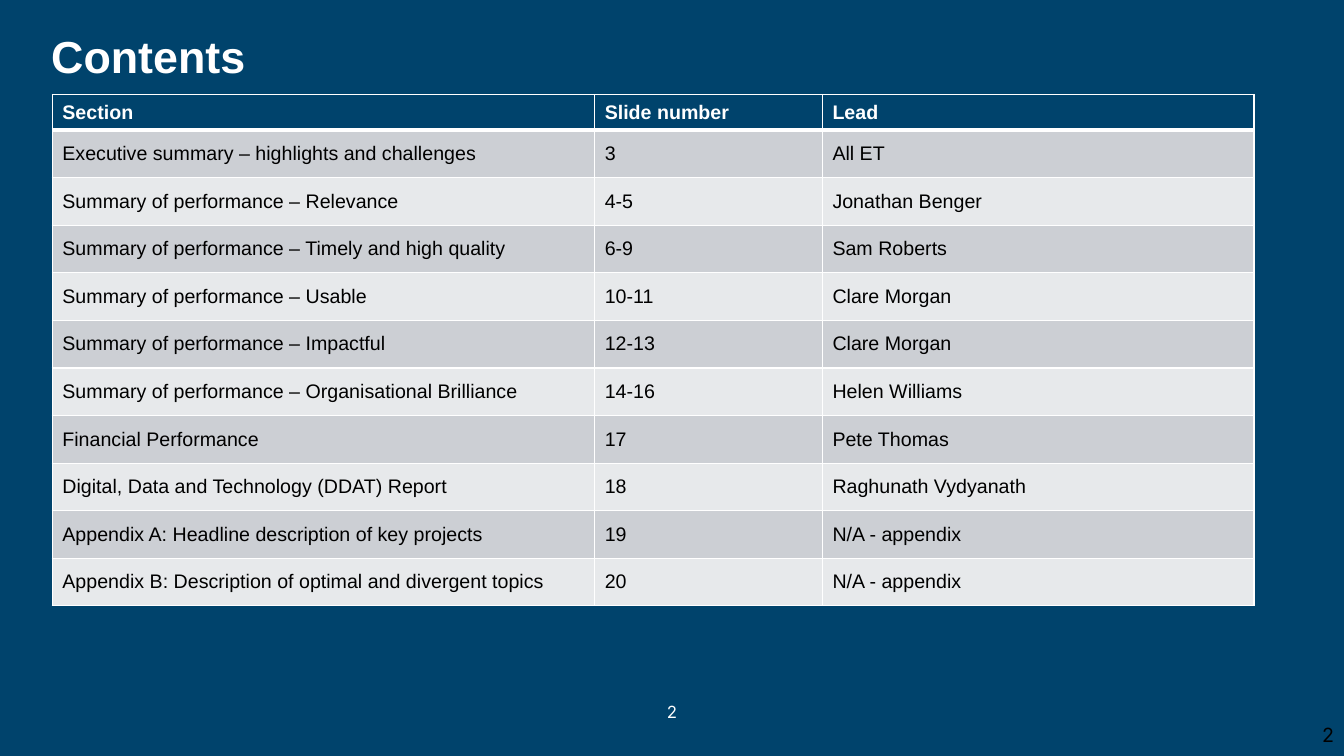
from dataclasses import dataclass

from lxml import etree
from pptx import Presentation
from pptx.dml.color import RGBColor
from pptx.enum import text as t
from pptx.oxml.ns import qn
from pptx.util import Pt


@dataclass(frozen=True)
class Theme:
    navy: str = "00436C"
    white: str = "FFFFFF"
    black: str = "000000"
    bands: tuple = ("CCCFD4", "E7E9EB")
    head: str = "Arial"
    foot: str = "Inter"
    title: int = 32
    body: int = 14
    small: int = 12
    thin: int = 1
    thick: int = 3


THEME = Theme()

WIDTHS = (387.4, 162.7, 308.3)
HEAD_H, ROW_H = 25.2, 34
ROWS = (
    ("Section", "Slide number", "Lead"),
    ("Executive summary – highlights and challenges", "3", "All ET"),
    ("Summary of performance – Relevance", "4-5", "Jonathan Benger"),
    ("Summary of performance – Timely and high quality", "6-9", "Sam Roberts"),
    ("Summary of performance – Usable", "10-11", "Clare Morgan"),
    ("Summary of performance – Impactful", "12-13", "Clare Morgan"),
    ("Summary of performance – Organisational Brilliance", "14-16", "Helen Williams"),
    ("Financial Performance", "17", "Pete Thomas"),
    ("Digital, Data and Technology (DDAT) Report", "18", "Raghunath Vydyanath"),
    ("Appendix A: Headline description of key projects", "19", "N/A - appendix"),
    ("Appendix B: Description of optimal and divergent topics", "20", "N/A - appendix"),
)


def write(frame, text, size=THEME.body, font=THEME.head, color=THEME.white,
          bold=False, align=t.PP_ALIGN.LEFT, space=None):
    """Fill a text frame with one formatted paragraph."""
    frame.word_wrap = True
    para = frame.paragraphs[0]
    para.alignment = align
    para.line_spacing = space
    run = para.add_run()
    run.text = text
    run.font.size = Pt(size)
    run.font.name = font
    run.font.bold = bold
    run.font.color.rgb = RGBColor.from_string(color)


def add_text(slide, box, text, anchor=t.MSO_ANCHOR.TOP, **style):
    frame = slide.shapes.add_textbox(*map(Pt, box)).text_frame
    frame.vertical_anchor = anchor
    write(frame, text, **style)


def add_rules(cell, top, bottom):
    """Draw white borders; top and bottom are widths in points."""
    props = cell._tc.get_or_add_tcPr()
    sides = {"L": THEME.thin, "R": THEME.thin, "T": top, "B": bottom}
    for side, width in sides.items():
        line = etree.SubElement(props, qn(f"a:ln{side}"), w=str(Pt(width)))
        fill = etree.SubElement(line, qn("a:solidFill"))
        etree.SubElement(fill, qn("a:srgbClr"), val=THEME.white)


def add_cell(cell, text, row):
    head = row == 0
    add_rules(cell, top=THEME.thick if row == 1 else THEME.thin,
              bottom=THEME.thick if head else THEME.thin)
    cell.fill.solid()
    color = THEME.navy if head else THEME.bands[(row - 1) % 2]
    cell.fill.fore_color.rgb = RGBColor.from_string(color)
    cell.vertical_anchor = t.MSO_ANCHOR.MIDDLE
    write(cell.text_frame, text, bold=head,
          color=THEME.white if head else THEME.black)


def add_contents(slide, left, top):
    height = HEAD_H + ROW_H * (len(ROWS) - 1)
    table = slide.shapes.add_table(
        len(ROWS), len(WIDTHS), Pt(left), Pt(top),
        Pt(sum(WIDTHS)), Pt(height)).table
    table.horz_banding = False
    for col, width in zip(table.columns, WIDTHS):
        col.width = Pt(width)
    for row, texts in enumerate(ROWS):
        table.rows[row].height = Pt(ROW_H if row else HEAD_H)
        for col, text in enumerate(texts):
            add_cell(table.cell(row, col), text, row)


def main():
    deck = Presentation()
    deck.slide_width, deck.slide_height = Pt(960), Pt(540)
    slide = deck.slides.add_slide(deck.slide_layouts[6])
    back = slide.background.fill
    back.solid()
    back.fore_color.rgb = RGBColor.from_string(THEME.navy)

    add_text(slide, (372, 497.5, 216, 28.8), "2", size=THEME.small,
             font=THEME.foot, align=t.PP_ALIGN.CENTER)
    add_text(slide, (29.5, 21.6, 776, 46), "Contents", size=THEME.title,
             bold=True, space=0.9)
    add_text(slide, (744, 510.5, 216, 28.8), "2", font=THEME.foot,
             color=THEME.black, align=t.PP_ALIGN.RIGHT,
             anchor=t.MSO_ANCHOR.MIDDLE)
    add_contents(slide, 37.4, 67.7)
    deck.save("out.pptx")


if __name__ == "__main__":
    main()
